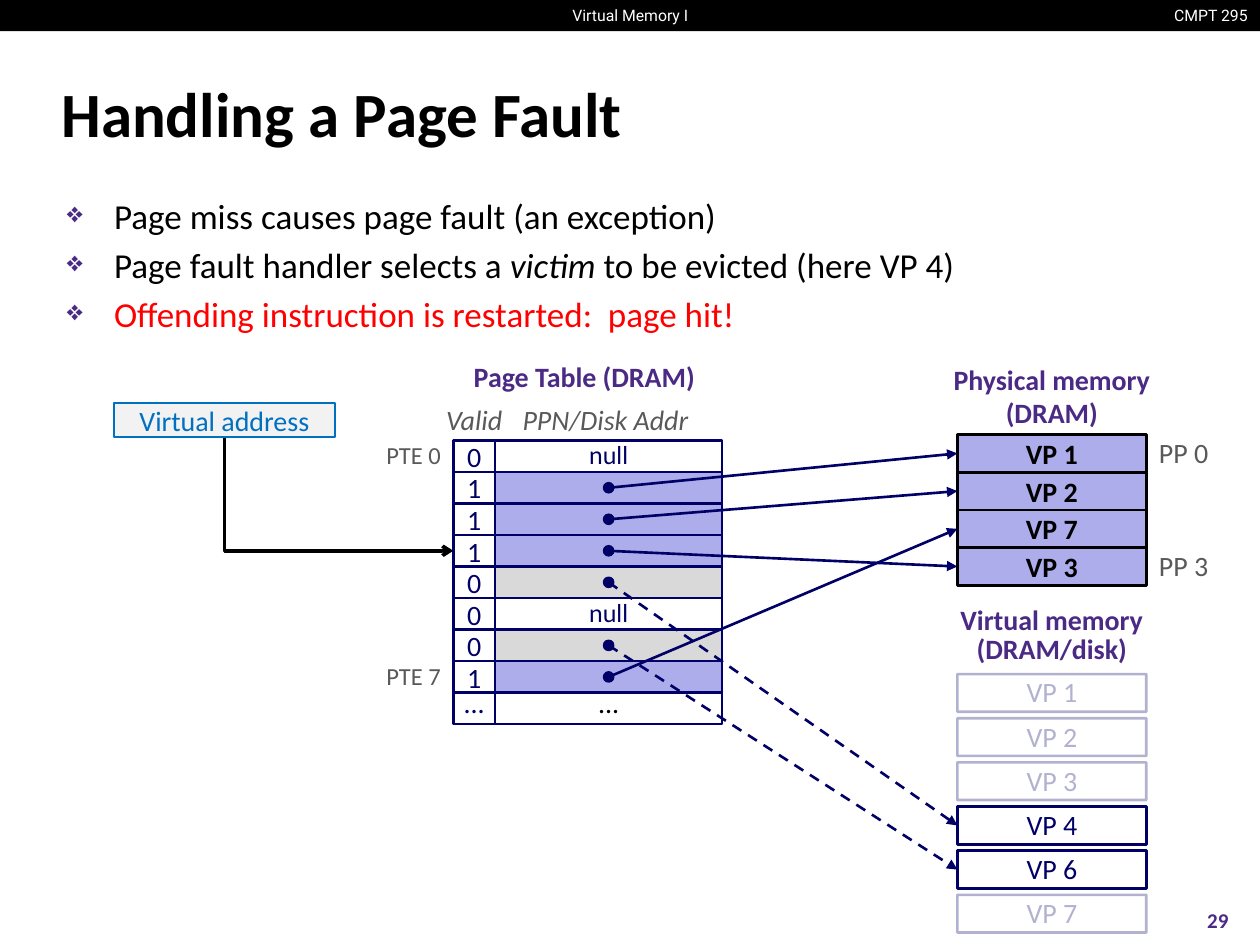
from lxml.etree import SubElement
from pptx import Presentation
from pptx.dml.color import RGBColor
from pptx.enum.dml import MSO_LINE
from pptx.enum.shapes import MSO_CONNECTOR, MSO_SHAPE
from pptx.enum.text import MSO_ANCHOR, PP_ALIGN
from pptx.oxml.ns import qn
from pptx.util import Cm, Pt

COURSE, LECTURE, PAGE = "CMPT 295", "Virtual Memory I", "29"
TITLE = "Handling a Page Fault"
# Each bullet: colour and (text, italic) runs
BULLETS = [
    ("black", [("Page miss causes page fault (an exception)", False)]),
    ("black", [("Page fault handler selects a ", False), ("victim", True),
               (" to be evicted (here VP 4)", False)]),
    ("red", [("Offending instruction is restarted:  page hit!", False)]),
]
# Each page table entry: valid bit, text, fill, page it points to
ENTRIES = [
    ("0", "null", "white", None),
    ("1", "", "lilac", "VP 1"),
    ("1", "", "lilac", "VP 2"),
    ("1", "", "lilac", "VP 3"),
    ("0", "", "silver", "VP 4"),
    ("0", "null", "white", None),
    ("0", "", "silver", "VP 6"),
    ("1", "", "lilac", "VP 7"),
    ("...", "...", "white", None),
]
ENTRY_LABELS = {0: "PTE 0", 7: "PTE 7"}
PHYSICAL_PAGES = ["VP 1", "VP 2", "VP 7", "VP 3"]
PHYSICAL_LABELS = {0: "PP 0", 3: "PP 3"}
DISK_PAGES = ["VP 1", "VP 2", "VP 3", "VP 4", "VP 6", "VP 7"]
ON_DISK_ONLY = {"VP 4", "VP 6"}

THEME = {
    "colors": {"black": "000000", "white": "FFFFFF", "purple": "4B2A85", "navy": "000066",
               "lilac": "ADADEB", "silver": "D9D9D9", "gray": "595959", "red": "FF0000",
               "blue": "0070C0", "pale": "F2F2F2"},
    "sizes": {"title": 36, "body": 20, "label": 16, "small": 14, "page": 12, "header": 9},
    "fonts": {"main": "Calibri", "header": "Roboto", "null": "Lato"},
}
HEADING = {"color": "purple", "bold": True, "spacing": 0.98}
NOTE = {"color": "gray", "spacing": 0.98}
INSETS = ("margin_left", "margin_top", "margin_right", "margin_bottom")
DEFAULT_INSETS = (0.25, 0.13, 0.25, 0.13)

# Diagram grid
TABLE_LEFT, TABLE_TOP, TABLE_H = Cm(9.14), Cm(8.88), Cm(5.72)
VALID_W, ENTRY_W = Cm(0.84), Cm(4.58)
ROW_H = TABLE_H // len(ENTRIES)
PAGE_LEFT, PAGE_W, PAGE_H = Cm(19.3), Cm(3.81), Cm(0.76)
PHYSICAL_TOP, DISK_TOP, DISK_PITCH = Cm(8.76), Cm(13.59), Cm(0.89)
DOT = Cm(0.2)
OVERHANG = Cm(0.3)  # how far a heading may reach past each side of its column

deck = Presentation()
deck.slide_width, deck.slide_height = Cm(25.4), Cm(19.05)
slide = deck.slides.add_slide(deck.slide_layouts[6])
shapes = slide.shapes


def rgb(name):
    return RGBColor.from_string(THEME["colors"][name])


def set_all(target, values):
    for name, value in values.items():
        setattr(target, name, value)


def style_run(run, size, color, font="main", bold=False, italic=False):
    set_all(run.font, {"size": Pt(THEME["sizes"][size]), "name": THEME["fonts"][font],
                       "bold": bold, "italic": italic})
    run.font.color.rgb = rgb(color)


def write(shape, text, size="label", align=PP_ALIGN.CENTER, insets=(0, 0, 0, 0), wrap=False,
          spacing=None, **run_style):
    """Fill a shape with one paragraph per line of text; insets are in cm."""
    frame = shape.text_frame
    set_all(frame, {"word_wrap": wrap, "vertical_anchor": MSO_ANCHOR.MIDDLE,
                    **dict(zip(INSETS, map(Cm, insets)))})
    for index, line in enumerate(text.split("\n")):
        paragraph = frame.add_paragraph() if index else frame.paragraphs[0]
        set_all(paragraph, {"alignment": align, "line_spacing": spacing})
        run = paragraph.add_run()
        run.text = line
        style_run(run, size, **run_style)


def label(left, top, width, height, text, **style):
    write(shapes.add_textbox(left, top, width, height), text, **style)


def column_heading(left, top, width, height, text, **style):
    label(left - OVERHANG, top, width + 2 * OVERHANG, height, text, **style)


def box(left, top, width, height, fill=None, line=None, weight=1.5, kind=MSO_SHAPE.RECTANGLE):
    shape = shapes.add_shape(kind, left, top, width, height)
    shape.shadow.inherit = False
    if fill:
        shape.fill.solid()
        shape.fill.fore_color.rgb = rgb(fill)
    else:
        shape.fill.background()
    if line:
        shape.line.color.rgb = rgb(line)
        shape.line.width = Pt(weight)
    else:
        shape.line.fill.background()
    return shape


def fade(shape):
    """Make the outline and text of a shape 30% opaque."""
    for color in shape._element.iter(qn("a:srgbClr")):
        SubElement(color, qn("a:alpha"), val="30000")


def arrow(start, end, color="navy", weight=1.5, dashed=False, head="triangle",
          kind=MSO_CONNECTOR.STRAIGHT):
    connector = shapes.add_connector(kind, *start, *end)
    connector.line.color.rgb = rgb(color)
    connector.line.width = Pt(weight)
    if dashed:
        connector.line.dash_style = MSO_LINE.DASH
    properties = connector._element.spPr
    SubElement(properties.find(qn("a:ln")), qn("a:tailEnd"), type=head)
    SubElement(properties, qn("a:effectLst"))
    return connector


def down_then_right_arrow(start, end, **style):
    """Draw a one-bend elbow as a box turned by 270 degrees about its centre."""
    (x1, y1), (x2, y2) = start, end
    mid_x, mid_y = (x1 + x2) // 2, (y1 + y2) // 2
    half_w, half_h = (y2 - y1) // 2, (x2 - x1) // 2
    elbow = arrow((mid_x + half_w, mid_y - half_h), (mid_x - half_w, mid_y + half_h),
                  kind=MSO_CONNECTOR.ELBOW, **style)
    properties = elbow._element.spPr
    properties.find(qn("a:xfrm")).set("rot", "16200000")
    properties.find(qn("a:prstGeom")).set("prst", "bentConnector2")


def draw_bullets():
    frame = shapes.add_textbox(Cm(1.1), Cm(3.8), Cm(23.24), Cm(3.3)).text_frame
    frame.word_wrap = True
    for index, (color, runs) in enumerate(BULLETS):
        paragraph = frame.add_paragraph() if index else frame.paragraphs[0]
        paragraph.space_before = Pt(4)
        properties = paragraph._p.get_or_add_pPr()
        for name, value in {"marL": Cm(0.95), "indent": -Cm(0.95)}.items():
            properties.set(name, str(int(value)))
        bullet_color = SubElement(properties, qn("a:buClr"))
        SubElement(bullet_color, qn("a:srgbClr"), val=THEME["colors"]["purple"])
        SubElement(properties, qn("a:buSzPct"), val="80000")
        SubElement(properties, qn("a:buChar"), char="❖")
        for text, italic in runs:
            run = paragraph.add_run()
            run.text = text
            style_run(run, "body", color, italic=italic)


# Header, title and page number
HEADER = {"size": "header", "color": "white", "font": "header", "insets": DEFAULT_INSETS}
box(0, 0, deck.slide_width, Cm(0.63), fill="black")
label(Cm(23.34), 0, Cm(2.06), Cm(0.63), COURSE, align=PP_ALIGN.RIGHT, **HEADER)
label(Cm(11.23), 0, Cm(2.95), Cm(0.63), LECTURE, **HEADER)
label(Cm(0.99), Cm(1.2), Cm(23.34), Cm(2.11), TITLE, size="title", color="black", bold=True,
      align=PP_ALIGN.LEFT, insets=DEFAULT_INSETS, wrap=True)
draw_bullets()
label(Cm(23.7), Cm(18.03), Cm(1.7), Cm(1.02), PAGE, size="page", color="purple", bold=True)

# Page table
entry_left = TABLE_LEFT + VALID_W
dot_x = entry_left + ENTRY_W // 2
column_heading(TABLE_LEFT, Cm(7.11), Cm(5.28), Cm(1.02), "Page Table (DRAM)", **HEADING)
column_heading(TABLE_LEFT, Cm(8.1), VALID_W, Cm(0.76), "Valid", italic=True, **NOTE)
column_heading(entry_left, Cm(8.1), Cm(4.45), Cm(0.76), "PPN/Disk Addr", italic=True, **NOTE)
pointers = []
for row, (valid, text, fill, target) in enumerate(ENTRIES):
    top = TABLE_TOP + row * ROW_H
    insets = (0, 0, 0, 0.23) if valid == "..." else (0, 0, 0, 0)
    entry = box(entry_left, top, ENTRY_W, ROW_H, fill, "navy")
    if text == "null":
        write(entry, text, size="small", color="navy", font="null", spacing=0.98)
    elif text:
        write(entry, text, color="black", insets=insets)
    write(box(TABLE_LEFT, top, VALID_W, ROW_H, line="navy"), valid, color="navy", insets=insets)
    if row in ENTRY_LABELS:
        label(Cm(7.62), top, Cm(1.52), ROW_H, ENTRY_LABELS[row], size="small", wrap=True,
              align=PP_ALIGN.RIGHT, insets=(0, 0, 0.25, 0), **NOTE)
    if target:
        middle = top + ROW_H // 2
        box(dot_x - DOT // 2, middle - DOT // 2, DOT, DOT, "navy", "navy", 1, MSO_SHAPE.OVAL)
        pointers.append(((dot_x, middle), target))

# Physical memory
page_middles = {}
column_heading(PAGE_LEFT, Cm(7.37), PAGE_W, Cm(1.27), "Physical memory\n(DRAM)", **HEADING)
for slot, page in enumerate(PHYSICAL_PAGES):
    top = PHYSICAL_TOP + slot * PAGE_H
    write(box(PAGE_LEFT, top, PAGE_W, PAGE_H, "lilac", "black"), page, color="black", bold=True)
    page_middles[page] = top + PAGE_H // 2
    if slot in PHYSICAL_LABELS:
        label(PAGE_LEFT + PAGE_W, top, Cm(1.5), PAGE_H, PHYSICAL_LABELS[slot], **NOTE)

# Virtual memory
column_heading(PAGE_LEFT, Cm(12.19), PAGE_W, Cm(1.27), "Virtual memory\n(DRAM/disk)",
               **{**HEADING, "spacing": 0.88})
for slot, page in enumerate(DISK_PAGES):
    top = DISK_TOP + slot * DISK_PITCH
    disk_page = box(PAGE_LEFT, top, PAGE_W, PAGE_H, line="navy")
    write(disk_page, page, color="navy", spacing=0.98)
    if page in ON_DISK_ONLY:
        page_middles[page] = top + PAGE_H // 2
    else:
        fade(disk_page)

# Pointers and the address being looked up
for start, target in pointers:
    arrow(start, (PAGE_LEFT, page_middles[target]), dashed=target in ON_DISK_ONLY)
down_then_right_arrow((Cm(4.53), Cm(8.81)), (TABLE_LEFT, TABLE_TOP + ROW_H * 7 // 2),
                      color="black", weight=2, head="arrow")
write(box(Cm(2.3), Cm(8.12), Cm(4.45), Cm(0.69), "pale", "blue", 1), "Virtual address",
      color="blue", insets=DEFAULT_INSETS, wrap=True)

deck.save("out.pptx")
